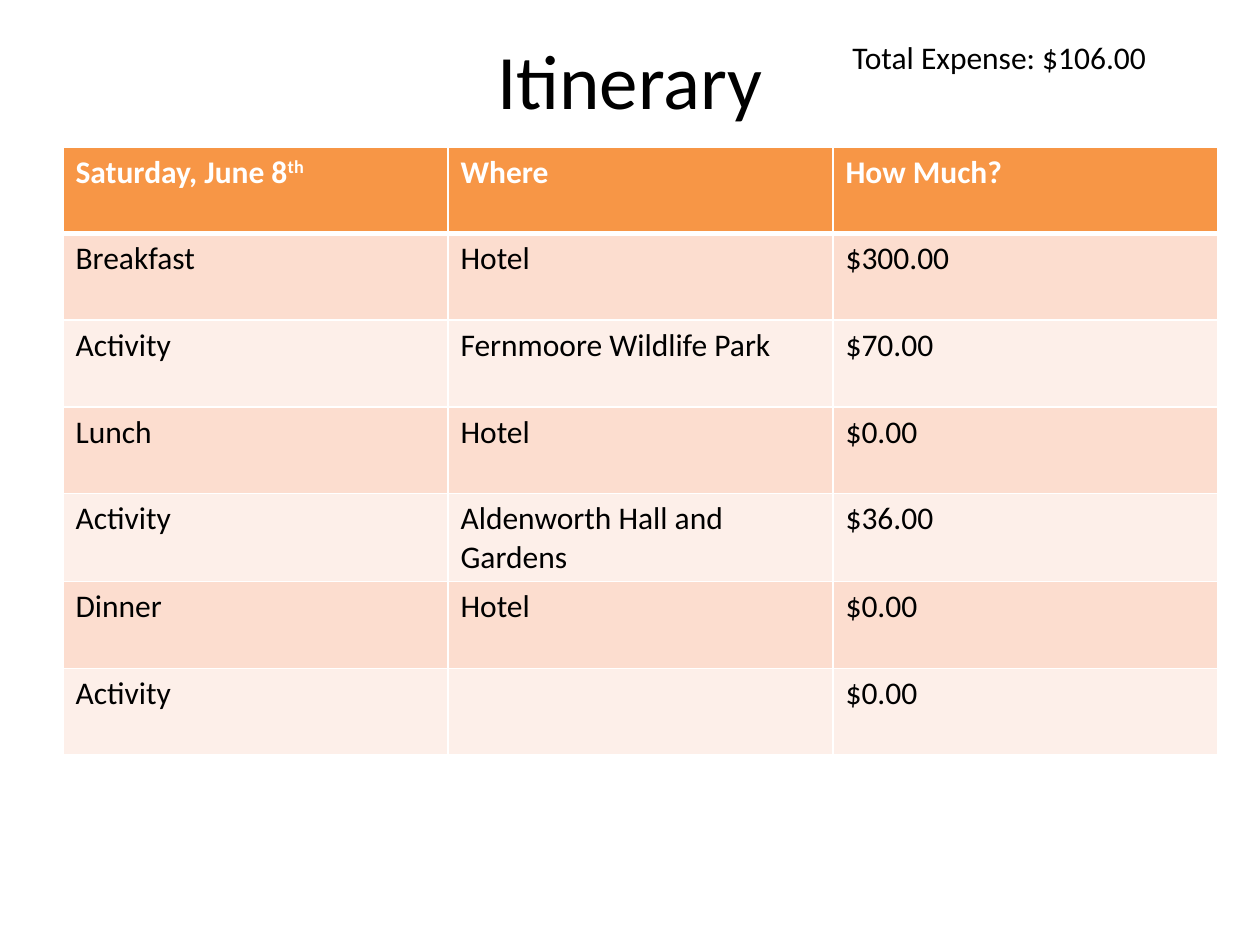
from lxml.etree import SubElement
from pptx import Presentation
from pptx.dml.color import RGBColor
from pptx.enum.text import MSO_ANCHOR as Anchor, PP_ALIGN as Align
from pptx.oxml.ns import qn
from pptx.util import Pt

# Content: a cell is a text, or a (text, superscript) pair
TITLE = "Itinerary"
TOTAL = "Total Expense: $106.00"
ROWS = [
    [("Saturday, June 8", "th"), "Where", "How Much?"],
    ["Breakfast", "Hotel", "$300.00"],
    ["Activity", "Fernmoore Wildlife Park", "$70.00"],
    ["Lunch", "Hotel", "$0.00"],
    ["Activity", "Aldenworth Hall and Gardens", "$36.00"],
    ["Dinner", "Hotel", "$0.00"],
    ["Activity", "", "$0.00"],
]

# Format
FONT = "Calibri"
BLACK, WHITE = "000000", "FFFFFF"
HEADER_FILL = "F79646"
BAND_FILLS = ["FDEFE9", "FCDDCF"]
TABLE_LEFT, TABLE_TOP, TABLE_WIDTH = 36, 84, 660
ROW_HEIGHT = 49.5


def color(value):
    return RGBColor.from_string(value)


def add_text(frame, text, size=18, fill=BLACK, bold=False, align=None, superscript=False):
    paragraph = frame.paragraphs[0]
    if align is not None:
        paragraph.alignment = align
    run = paragraph.add_run()
    run.text = text
    run.font.name, run.font.size, run.font.bold = FONT, Pt(size), bold
    run.font.color.rgb = color(fill)
    if superscript:
        run.font._element.set("baseline", "30000")


def set_borders(cell, bottom):
    properties = cell._tc.get_or_add_tcPr()
    widths = {"a:lnL": 1, "a:lnR": 1, "a:lnT": 1, "a:lnB": bottom}
    for index, (side, width) in enumerate(widths.items()):
        line = properties.makeelement(qn(side), {"w": str(Pt(width))})
        properties.insert(index, line)
        solid = SubElement(line, qn("a:solidFill"))
        SubElement(solid, qn("a:srgbClr"), val=WHITE)


presentation = Presentation()
presentation.slide_width, presentation.slide_height = Pt(720), Pt(540)
slide = presentation.slides.add_slide(presentation.slide_layouts[5])

# Title
title = slide.shapes.title
title.left, title.top, title.width, title.height = Pt(36), Pt(0), Pt(648), Pt(90)
title.text_frame.vertical_anchor = Anchor.MIDDLE
add_text(title.text_frame, TITLE, size=44, align=Align.CENTER)

# Total expense
total = slide.shapes.add_textbox(Pt(480), Pt(18), Pt(222), Pt(29))
total.text_frame.word_wrap = True
add_text(total.text_frame, TOTAL)

# Itinerary table
table = slide.shapes.add_table(
    len(ROWS), len(ROWS[0]), Pt(TABLE_LEFT), Pt(TABLE_TOP),
    Pt(TABLE_WIDTH), Pt(ROW_HEIGHT * len(ROWS))).table
for row_index, row in enumerate(ROWS):
    table.rows[row_index].height = Pt(ROW_HEIGHT)
    header = row_index == 0
    for column_index, content in enumerate(row):
        cell = table.cell(row_index, column_index)
        cell.fill.solid()
        cell.fill.fore_color.rgb = color(HEADER_FILL if header else BAND_FILLS[row_index % 2])
        set_borders(cell, bottom=3 if header else 1)
        parts = content if isinstance(content, tuple) else (content,)
        for part_index, part in enumerate(parts):
            if part:
                add_text(cell.text_frame, part, fill=WHITE if header else BLACK,
                         bold=header, superscript=part_index == 1)

presentation.save("out.pptx")
